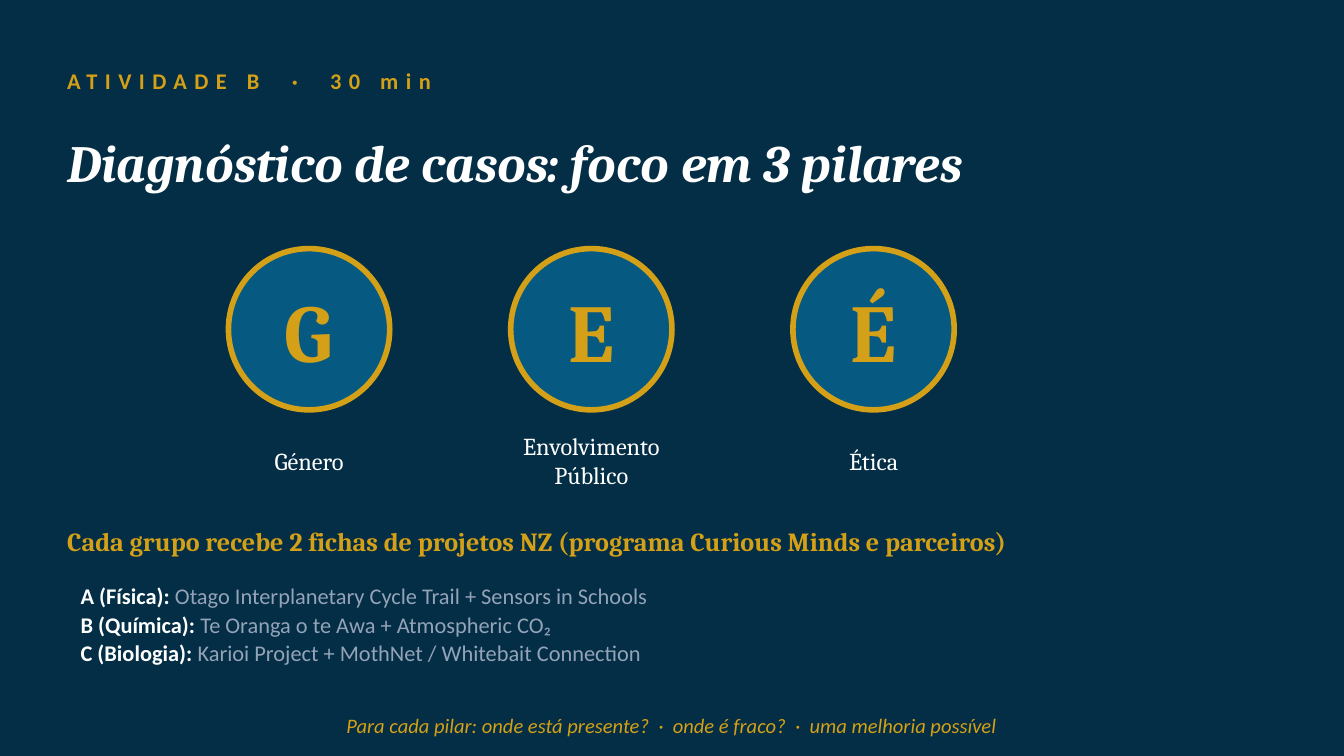
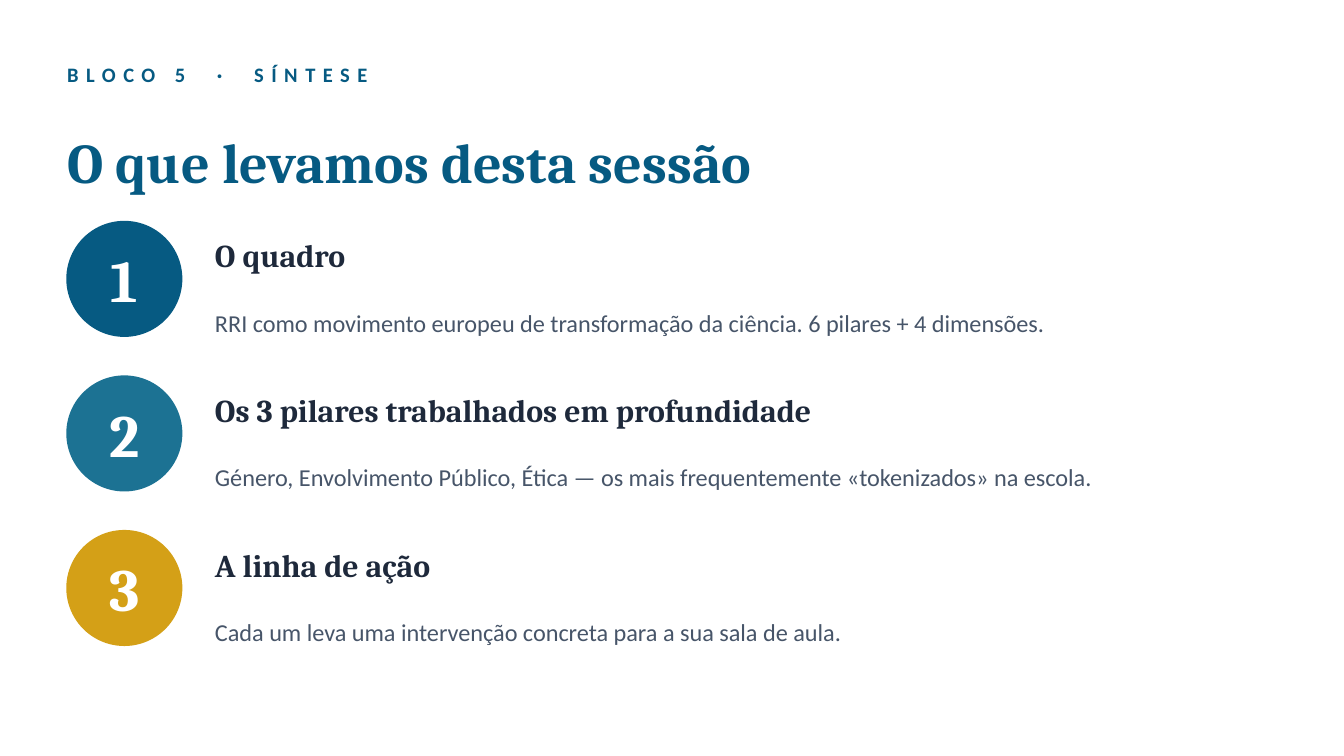
"""Build two slides: a case activity and a session wrap-up."""
from dataclasses import dataclass

from lxml import etree
from pptx import Presentation
from pptx.dml.color import RGBColor
from pptx.enum.shapes import MSO_SHAPE
from pptx.enum.text import MSO_ANCHOR, MSO_AUTO_SIZE, PP_ALIGN
from pptx.oxml.ns import qn
from pptx.util import Inches, Pt

OVAL = MSO_SHAPE.OVAL
MIDDLE = MSO_ANCHOR.MIDDLE
NO_FIT = MSO_AUTO_SIZE.NONE
LEFT, CENTER = PP_ALIGN.LEFT, PP_ALIGN.CENTER
LIST_LAYOUT, TITLE_LAYOUT = 1, 5


@dataclass(frozen=True)
class Theme:
    """Hold the colours, fonts, type sizes and margins of the deck."""
    navy: str = "032E45"
    blue: str = "065A82"
    teal: str = "1C7293"
    gold: str = "D4A017"
    white: str = "FFFFFF"
    ink: str = "1E293B"
    slate: str = "475569"
    mist: str = "94A3B8"
    serif: str = "Cambria"
    sans: str = "Calibri"
    small: int = 11
    list_size: int = 12
    text: int = 13
    lead: int = 14
    point: int = 17
    title: int = 28
    big_title: int = 30
    number: int = 32
    letter: int = 44
    margin: float = 0.5
    width: float = 9


THEME = Theme()

PILLARS = [("G", "Género"), ("E", "Envolvimento\nPúblico"), ("É", "Ética")]
CASES = [
    ("A (Física): ", "Otago Interplanetary Cycle Trail + Sensors in Schools"),
    ("B (Química): ", "Te Oranga o te Awa + Atmospheric CO₂"),
    ("C (Biologia): ", "Karioi Project + MothNet / Whitebait Connection"),
]
POINTS = [
    (THEME.blue, "O quadro",
     "RRI como movimento europeu de transformação da ciência. 6 pilares + 4 dimensões."),
    (THEME.teal, "Os 3 pilares trabalhados em profundidade",
     "Género, Envolvimento Público, Ética — os mais frequentemente «tokenizados» na escola."),
    (THEME.gold, "A linha de ação",
     "Cada um leva uma intervenção concreta para a sua sala de aula."),
]


def style(run, size, color, font, bold=False, italic=False):
    """Format one run."""
    run.font.size = Pt(size)
    run.font.name = font
    run.font.bold = bold
    run.font.italic = italic
    run.font.color.rgb = RGBColor.from_string(color)


def place(shape, left, top, width, height):
    """Move and size a shape in inches."""
    shape.left, shape.top = Inches(left), Inches(top)
    shape.width, shape.height = Inches(width), Inches(height)


def set_frame(frame, inset=True):
    """Wrap and centre a text frame, with or without insets."""
    frame.word_wrap = True
    frame.auto_size = NO_FIT
    frame.vertical_anchor = MIDDLE
    side, edge = (0.1, 0.05) if inset else (0, 0)
    frame.margin_left = frame.margin_right = Inches(side)
    frame.margin_top = frame.margin_bottom = Inches(edge)


def write(shape, text, size, color, font, align=LEFT, **look):
    """Fill a shape with text in one style."""
    frame = shape.text_frame
    set_frame(frame, inset=False)
    frame.text = text
    for para in frame.paragraphs:
        para.alignment = align
        for run in para.runs:
            style(run, size, color, font, **look)


def add_text(slide, box, text, size, color, font, **look):
    """Add a text box and return it."""
    shape = slide.shapes.add_textbox(*map(Inches, box))
    write(shape, text, size, color, font, **look)
    return shape


def add_disc(slide, left, top, side, fill, edge, weight, text, size, color):
    """Add a filled circle that carries a letter or number."""
    disc = slide.shapes.add_shape(OVAL, *map(Inches, (left, top, side, side)))
    disc.shadow.inherit = False
    disc.fill.solid()
    disc.fill.fore_color.rgb = RGBColor.from_string(fill)
    disc.line.color.rgb = RGBColor.from_string(edge)
    disc.line.width = Pt(weight)
    write(disc, text, size, color, THEME.serif, align=CENTER, bold=True)


def add_kicker(slide, top, text, size, color):
    """Add the spaced label above the title."""
    box = (THEME.margin, top, THEME.width, 0.4)
    label = add_text(slide, box, text, size, color, THEME.sans, bold=True)
    for run in label.text_frame.paragraphs[0].runs:
        run._r.get_or_add_rPr().set("spc", "400")


def add_slide(deck, layout, back, title, size, color, italic=False):
    """Add a slide with its ground colour and title."""
    slide = deck.slides.add_slide(deck.slide_layouts[layout])
    slide.background.fill.solid()
    slide.background.fill.fore_color.rgb = RGBColor.from_string(back)
    head = slide.shapes.title
    place(head, THEME.margin, 0.85, THEME.width, 0.7)
    write(head, title, size, color, THEME.serif, bold=True, italic=italic)
    return slide


def fill_cases(body):
    """Fill the body placeholder with the cases of each group."""
    place(body, THEME.margin, 4.22, THEME.width, 0.85)
    frame = body.text_frame
    set_frame(frame)
    for index, (group, names) in enumerate(CASES):
        para = frame.add_paragraph() if index else frame.paragraphs[0]
        props = para._p.get_or_add_pPr()
        props.set("marL", "0")
        props.set("indent", "0")
        etree.SubElement(props, qn("a:buNone"))
        para.space_before, para.space_after = Pt(0), Pt(1)
        for text, color, bold in ((group, THEME.white, True),
                                  (names, THEME.mist, False)):
            run = para.add_run()
            run.text = text
            style(run, THEME.list_size, color, THEME.sans, bold=bold)


def add_pillar(slide, left, letter, name):
    """Add a ringed letter with its name below."""
    add_disc(slide, left, 1.85, 1.2, THEME.blue, THEME.gold, 3,
             letter, THEME.letter, THEME.gold)
    add_text(slide, (left - 0.4, 3.15, 2, 0.55), name, THEME.text,
             THEME.white, THEME.serif, align=CENTER)


def add_point(slide, top, number, color, head, text):
    """Add a numbered disc with a heading and a line of text."""
    add_disc(slide, THEME.margin, top, 0.85, color, color, 1,
             str(number), THEME.number, THEME.white)
    add_text(slide, (1.6, top + 0.05, 7.9, 0.4), head, THEME.point,
             THEME.ink, THEME.serif, bold=True)
    add_text(slide, (1.6, top + 0.45, 7.9, 0.6), text, THEME.text,
             THEME.slate, THEME.sans)


def build_cases(deck):
    """Build the activity slide."""
    slide = add_slide(deck, LIST_LAYOUT, THEME.navy,
                      "Diagnóstico de casos: foco em 3 pilares",
                      THEME.title, THEME.white, italic=True)
    add_kicker(slide, 0.4, "ATIVIDADE B  ·  30 min", THEME.list_size, THEME.gold)
    for index, (letter, name) in enumerate(PILLARS):
        add_pillar(slide, 1.7 + 2.1 * index, letter, name)
    add_text(slide, (THEME.margin, 3.85, THEME.width, 0.35),
             "Cada grupo recebe 2 fichas de projetos NZ (programa Curious Minds e parceiros)",
             THEME.lead, THEME.gold, THEME.serif, bold=True)
    fill_cases(slide.placeholders[1])
    add_text(slide, (THEME.margin, 5.25, THEME.width, 0.3),
             "Para cada pilar: onde está presente?  ·  onde é fraco?  ·  uma melhoria possível",
             THEME.small, THEME.gold, THEME.sans, align=CENTER, italic=True)


def build_points(deck):
    """Build the wrap-up slide."""
    slide = add_slide(deck, TITLE_LAYOUT, THEME.white,
                      "O que levamos desta sessão", THEME.big_title, THEME.blue)
    add_kicker(slide, 0.35, "BLOCO 5  ·  SÍNTESE", THEME.small, THEME.blue)
    for index, point in enumerate(POINTS):
        add_point(slide, 1.65 + 1.15 * index, index + 1, *point)


def main():
    """Build and save the deck in 16:9."""
    deck = Presentation()
    deck.slide_width = Inches(10)
    deck.slide_height = Inches(10 * 9 / 16)
    build_cases(deck)
    build_points(deck)
    deck.save("out.pptx")


if __name__ == "__main__":
    main()
